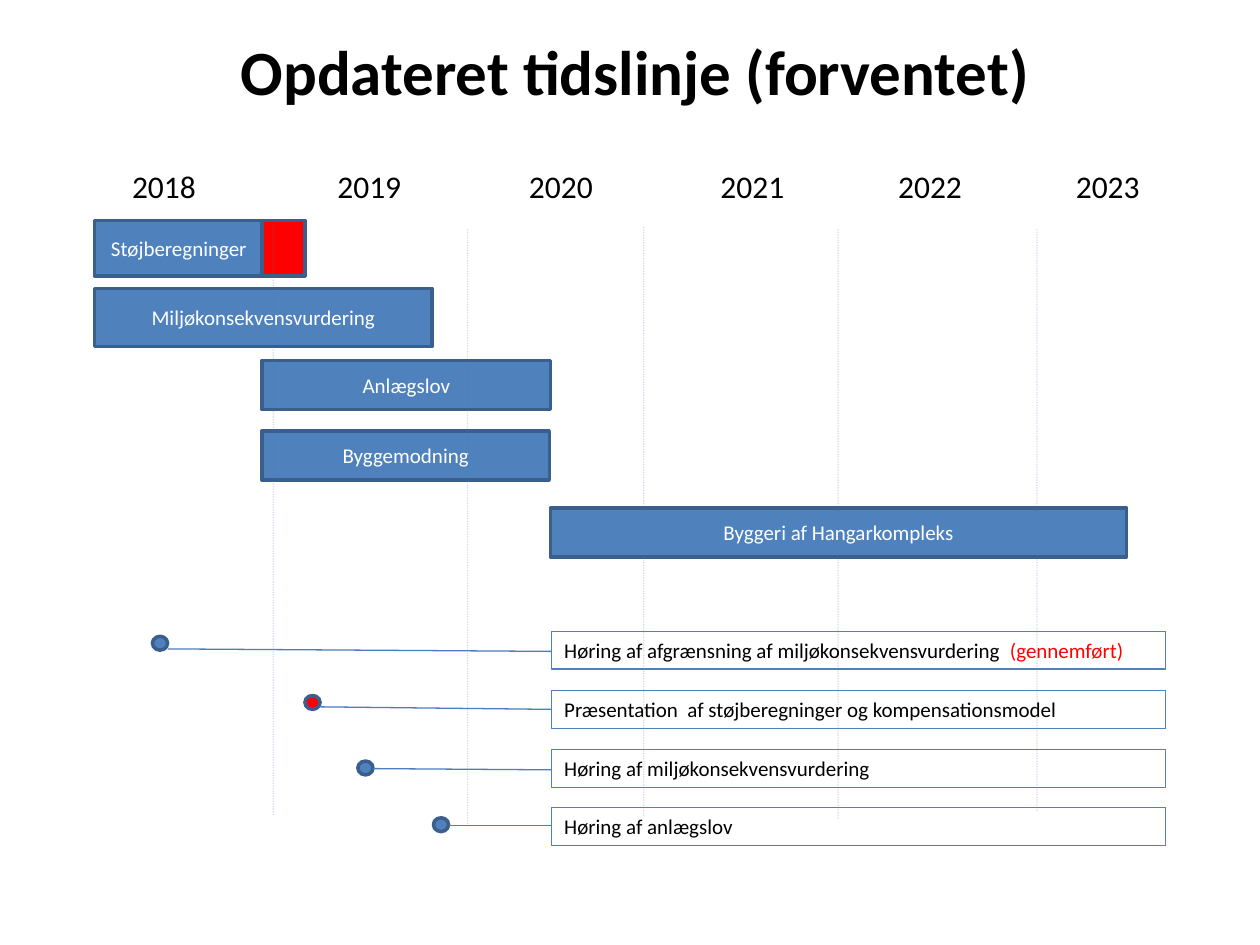
from lxml import etree
from pptx import Presentation
from pptx.dml.color import RGBColor
from pptx.enum.dml import MSO_LINE
from pptx.enum.shapes import MSO_CONNECTOR, MSO_SHAPE
from pptx.enum.text import MSO_ANCHOR, PP_ALIGN
from pptx.oxml.ns import qn
from pptx.util import Inches, Pt

COLORS = {"blue": "4F81BD", "edge": "3A5F8C", "line": "4B7EBC",
          "red": "FF0000", "black": "000000", "white": "FFFFFF"}
YEARS = [("2018", 0.28), ("2019", 1.91), ("2020", 3.43),
         ("2021", 4.95), ("2022", 6.36), ("2023", 7.77)]
BARS = [  # label, left, top, width, height
    ("Støjberegninger", 0.75, 1.75, 1.34, 0.44),
    ("Miljøkonsekvensvurdering", 0.75, 2.29, 2.68, 0.46),
    ("Anlægslov", 2.08, 2.86, 2.29, 0.39),
    ("Byggemodning", 2.08, 3.42, 2.28, 0.39),
    ("Byggeri af Hangarkompleks", 4.37, 4.03, 4.57, 0.39),
]
DELAY = (2.08, 1.75, 0.34, 0.44)
YEAR_LINES = [(2.17, 1.79, 6.47), (3.71, 1.82, 6.56), (5.11, 1.8, 6.48),
              (6.65, 1.82, 6.5), (8.23, 1.82, 6.44)]  # x, top, bottom
MILESTONES = [  # runs, box top, dot left, dot top, dot colour, line start y, line end y
    ([("Høring af afgrænsning af miljøkonsekvensvurdering  ", "black"),
      ("(gennemført)", "red")], 5.01, 1.21, 5.05, "blue", 5.17, 5.15),
    ([("Præsentation  af støjberegninger og kompensationsmodel", "black")],
     5.48, 2.42, 5.52, "red", 5.63, 5.61),
    ([("Høring af miljøkonsekvensvurdering", "black")],
     5.95, 2.84, 6.04, "blue", 6.11, 6.1),
    ([("Høring af anlægslov", "black")], 6.41, 3.44, 6.49, "blue", 6.55, 6.55),
]


def rgb(name):
    return RGBColor.from_string(COLORS[name])


def add_run(p, text, size, color, bold=False):
    r = p.add_run()
    r.text = text
    r.font.name = "Calibri"
    r.font.size = Pt(size)
    r.font.bold = bold
    r.font.color.rgb = rgb(color)


def add_textbox(slide, box):
    tf = slide.shapes.add_textbox(*map(Inches, box)).text_frame
    tf.word_wrap = True
    return tf


def add_box(slide, kind, box, fill, line, weight):
    sp = slide.shapes.add_shape(kind, *map(Inches, box))
    sp.shadow.inherit = False
    if fill:
        sp.fill.solid()
        sp.fill.fore_color.rgb = rgb(fill)
    else:
        sp.fill.background()
    sp.line.color.rgb = rgb(line)
    sp.line.width = Pt(weight)
    return sp


def add_line(slide, x1, y1, x2, y2):
    cn = slide.shapes.add_connector(MSO_CONNECTOR.STRAIGHT,
                                    *map(Inches, (x1, y1, x2, y2)))
    cn.line.color.rgb = rgb("line")
    cn.line.width = Pt(0.75)
    etree.SubElement(cn._element.spPr, qn("a:effectLst"))
    return cn


def add_title(slide, box):
    tf = add_textbox(slide, box)
    tf.vertical_anchor = MSO_ANCHOR.MIDDLE
    p = tf.paragraphs[0]
    p.alignment = PP_ALIGN.CENTER
    add_run(p, "Opdateret tidslinje (forventet)", 36, "black", bold=True)


def add_years(slide, box):
    """One line of years, each set at its own tab stop."""
    p = add_textbox(slide, box).paragraphs[0]
    tabs = etree.SubElement(p._p.get_or_add_pPr(), qn("a:tabLst"))
    for year, pos in YEARS:
        etree.SubElement(tabs, qn("a:tab"), pos=str(Inches(pos)), algn="l")
        add_run(p, "\t" + year, 18, "black")


def add_bars(slide):
    for label, *box in BARS:
        sp = add_box(slide, MSO_SHAPE.RECTANGLE, box, "blue", "edge", 2)
        tf = sp.text_frame
        tf.word_wrap = True
        tf.vertical_anchor = MSO_ANCHOR.MIDDLE
        p = tf.paragraphs[0]
        p.alignment = PP_ALIGN.CENTER
        add_run(p, label, 12, "white")
    add_box(slide, MSO_SHAPE.RECTANGLE, DELAY, "red", "edge", 2)


def add_year_lines(slide):
    for x, top, bottom in YEAR_LINES:
        cn = add_line(slide, x, top, x, bottom)
        cn.line.dash_style = MSO_LINE.ROUND_DOT
        clr = cn._element.spPr.find(".//" + qn("a:srgbClr"))
        etree.SubElement(clr, qn("a:alpha"), val="26000")


def add_milestones(slide, left, width, height):
    dot_w, dot_h = 0.12, 0.11
    for runs, top, dot_x, dot_y, color, y1, y2 in MILESTONES:
        sp = add_box(slide, MSO_SHAPE.RECTANGLE, (left, top, width, height),
                     None, "blue", 0.75)
        tf = sp.text_frame
        tf.word_wrap = True
        tf.vertical_anchor = MSO_ANCHOR.TOP
        p = tf.paragraphs[0]
        p.alignment = PP_ALIGN.LEFT
        for text, text_color in runs:
            add_run(p, text, 12, text_color)
        add_box(slide, MSO_SHAPE.OVAL, (dot_x, dot_y, dot_w, dot_h), color, "edge", 2)
        add_line(slide, left, y1, dot_x + dot_w, y2)


def main():
    prs = Presentation()
    prs.slide_width, prs.slide_height = Inches(10), Inches(7.5)
    slide = prs.slides.add_slide(prs.slide_layouts[6])
    add_title(slide, (0.54, 0.13, 9, 0.85))
    add_years(slide, (0.67, 1.28, 8.74, 0.4))
    add_bars(slide)
    add_year_lines(slide)
    add_milestones(slide, 4.38, 4.87, 0.3)
    prs.save("out.pptx")


if __name__ == "__main__":
    main()
